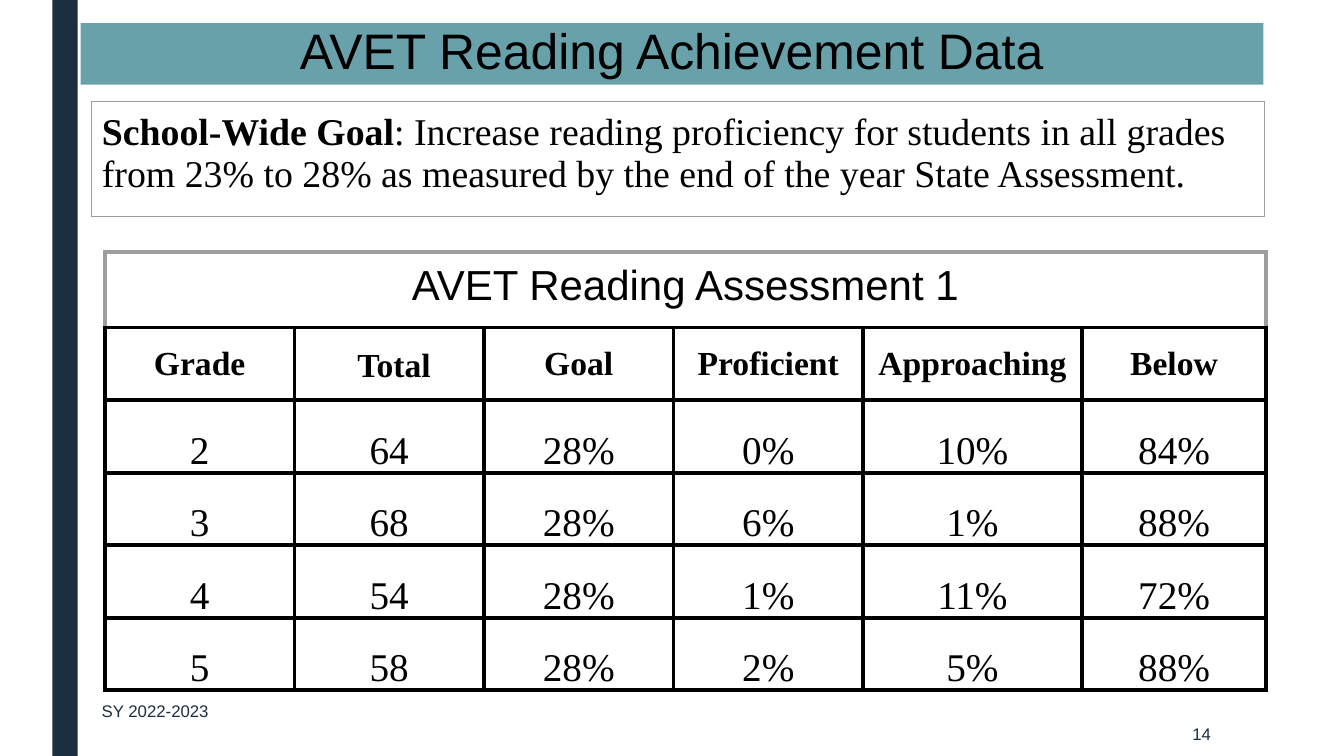
from dataclasses import dataclass

from lxml.etree import SubElement
from pptx import Presentation
from pptx.dml.color import RGBColor
from pptx.enum.shapes import MSO_SHAPE
from pptx.enum.text import MSO_ANCHOR, MSO_AUTO_SIZE, PP_ALIGN
from pptx.oxml.ns import qn
from pptx.util import Inches, Pt


@dataclass(frozen=True)
class Theme:
    navy: RGBColor = RGBColor(0x1A, 0x2E, 0x40)
    teal: RGBColor = RGBColor(0x69, 0xA1, 0xAB)
    black: RGBColor = RGBColor(0, 0, 0)
    gray: RGBColor = RGBColor(0x9E, 0x9E, 0x9E)
    sans: str = "Arial"
    serif: str = "Times New Roman"
    title: float = 35.6
    caption: float = 30
    score: float = 28
    goal: float = 27
    heading: float = 24
    footer: float = 12


THEME = Theme()


def style(font, face, size, color, bold=False):
    font.name, font.size, font.bold = face, Pt(size), bold
    font.color.rgb = color


def format_cell(cell, inset_x, inset_y, anchor, width, sides, bottom):
    """Set insets, anchor, borders (width in points) and an empty fill."""
    cell.margin_left = cell.margin_right = Inches(inset_x)
    cell.margin_top = cell.margin_bottom = Inches(inset_y)
    cell.vertical_anchor = anchor
    properties = cell._tc.get_or_add_tcPr()
    for edge, color in (("L", sides), ("R", sides), ("T", sides), ("B", bottom)):
        border = SubElement(properties, qn(f"a:ln{edge}"), w=str(Pt(width)))
        SubElement(SubElement(border, qn("a:solidFill")), qn("a:srgbClr"), val=str(color))
    cell.fill.background()


presentation = Presentation()
presentation.slide_width = Inches(13.33)
presentation.slide_height = Inches(7.5)
slide = presentation.slides.add_slide(presentation.slide_layouts[5])

side_band = slide.shapes.add_shape(
    MSO_SHAPE.RECTANGLE, Inches(0.52), 0, Inches(0.25), Inches(7.5))
side_band.shadow.inherit = False
side_band.fill.solid()
side_band.fill.fore_color.rgb = THEME.navy
side_band.line.fill.background()

# Title
title = slide.shapes.title
title.left, title.top = Inches(0.8), Inches(0.23)
title.width, title.height = Inches(11.73), Inches(0.61)
title.fill.solid()
title.fill.fore_color.rgb = THEME.teal
title.text_frame.text = "AVET Reading Achievement Data"
title.text_frame.auto_size = MSO_AUTO_SIZE.NONE
title.text_frame.vertical_anchor = MSO_ANCHOR.MIDDLE
heading = title.text_frame.paragraphs[0]
heading.alignment = PP_ALIGN.CENTER
heading.line_spacing = 0.89
style(heading.font, THEME.sans, THEME.title, THEME.black)

# Footer
for text, left, top, width, alignment in (
    ("14", 10.36, 7.06, 1.75, PP_ALIGN.RIGHT),
    ("SY 2022-2023", 0.91, 6.83, 2.06, PP_ALIGN.LEFT),
):
    footer = slide.shapes.add_textbox(
        Inches(left), Inches(top), Inches(width), Inches(0.44)).text_frame
    footer.word_wrap = True
    footer.vertical_anchor = MSO_ANCHOR.MIDDLE
    footer.text = text
    footer.paragraphs[0].alignment = alignment
    style(footer.paragraphs[0].font, THEME.sans, THEME.footer, THEME.navy)

# School-wide goal
goal_table = slide.shapes.add_table(
    1, 12, Inches(0.91), Inches(1.01), Inches(11.63), Inches(1.14)).table
goal_table.first_row = goal_table.horz_banding = False
goal_table.cell(0, 0).merge(goal_table.cell(0, 11))
for cell in goal_table.iter_cells():
    format_cell(cell, 0.1, 0.1, MSO_ANCHOR.TOP, 0.75, THEME.gray, THEME.gray)
goal = goal_table.cell(0, 0).text_frame.paragraphs[0]
style(goal.font, THEME.serif, THEME.goal, THEME.black)
goal_label = goal.add_run()
goal_label.text = "School-Wide Goal"
goal_label.font.bold = True
goal.add_run().text = (
    ": Increase reading proficiency for students in all grades "
    "from 23% to 28% as measured by the end of the year State Assessment.")

# Assessment results
RESULTS = [
    ["AVET Reading Assessment 1"],
    ["Grade", "Total", "Goal", "Proficient", "Approaching", "Below"],
    ["2", "64", "28%", "0%", "10%", "84%"],
    ["3", "68", "28%", "6%", "1%", "88%"],
    ["4", "54", "28%", "1%", "11%", "72%"],
    ["5", "58", "28%", "2%", "5%", "88%"],
]
COLUMN_WIDTHS = [1.88, 1.88, 1.88, 1.88, 2.17, 1.83]
ROW_HEIGHTS = [0.75] + [0.72] * 5

results = slide.shapes.add_table(
    len(ROW_HEIGHTS), len(COLUMN_WIDTHS), Inches(1.04), Inches(2.5),
    Inches(sum(COLUMN_WIDTHS)), Inches(sum(ROW_HEIGHTS))).table
results.first_row = results.horz_banding = False
for column, width in zip(results.columns, COLUMN_WIDTHS):
    column.width = Inches(width)
for row, height in zip(results.rows, ROW_HEIGHTS):
    row.height = Inches(height)
results.cell(0, 0).merge(results.cell(0, 5))
for cell in results.rows[0].cells:
    format_cell(cell, 0.1, 0.1, MSO_ANCHOR.TOP, 3, THEME.gray, THEME.black)

for row_number, entries in enumerate(RESULTS):
    if row_number == 0:
        face, size, bold = THEME.sans, THEME.caption, False
    elif row_number == 1:
        face, size, bold = THEME.serif, THEME.heading, True
    else:
        face, size, bold = THEME.serif, THEME.score, False
    for column_number, entry in enumerate(entries):
        cell = results.cell(row_number, column_number)
        if row_number > 0:
            anchor = MSO_ANCHOR.MIDDLE if row_number == 1 else MSO_ANCHOR.BOTTOM
            format_cell(cell, 0.08, 0, anchor, 3, THEME.black, THEME.black)
        paragraph = cell.text_frame.paragraphs[0]
        paragraph.alignment = PP_ALIGN.CENTER
        style(paragraph.font, face, size, THEME.black, bold)
        if entry == "Total":
            lead_space = paragraph.add_run()
            lead_space.text = " "
            lead_space.font.size, lead_space.font.bold = Pt(THEME.score), False
        paragraph.add_run().text = entry

presentation.save("out.pptx")
